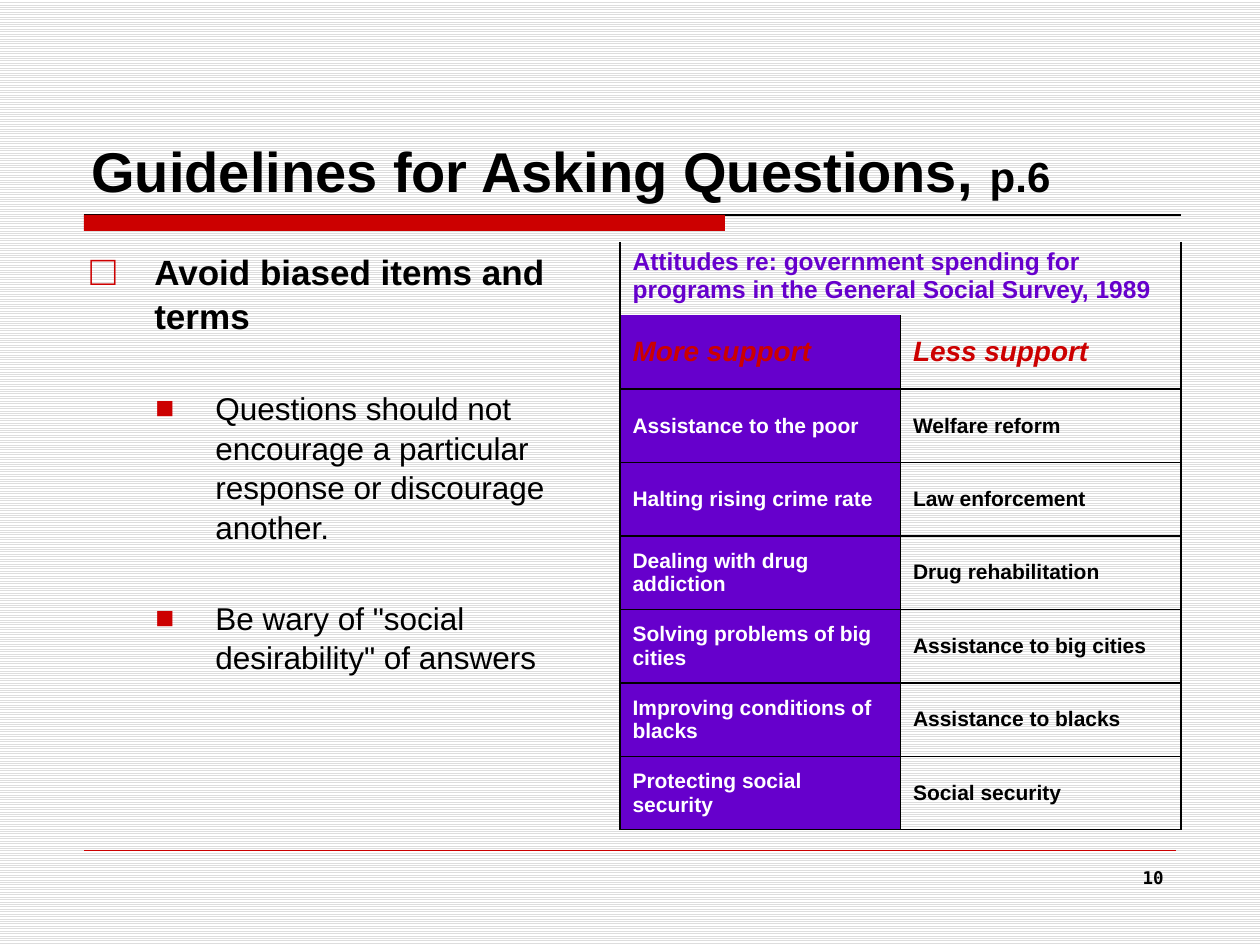
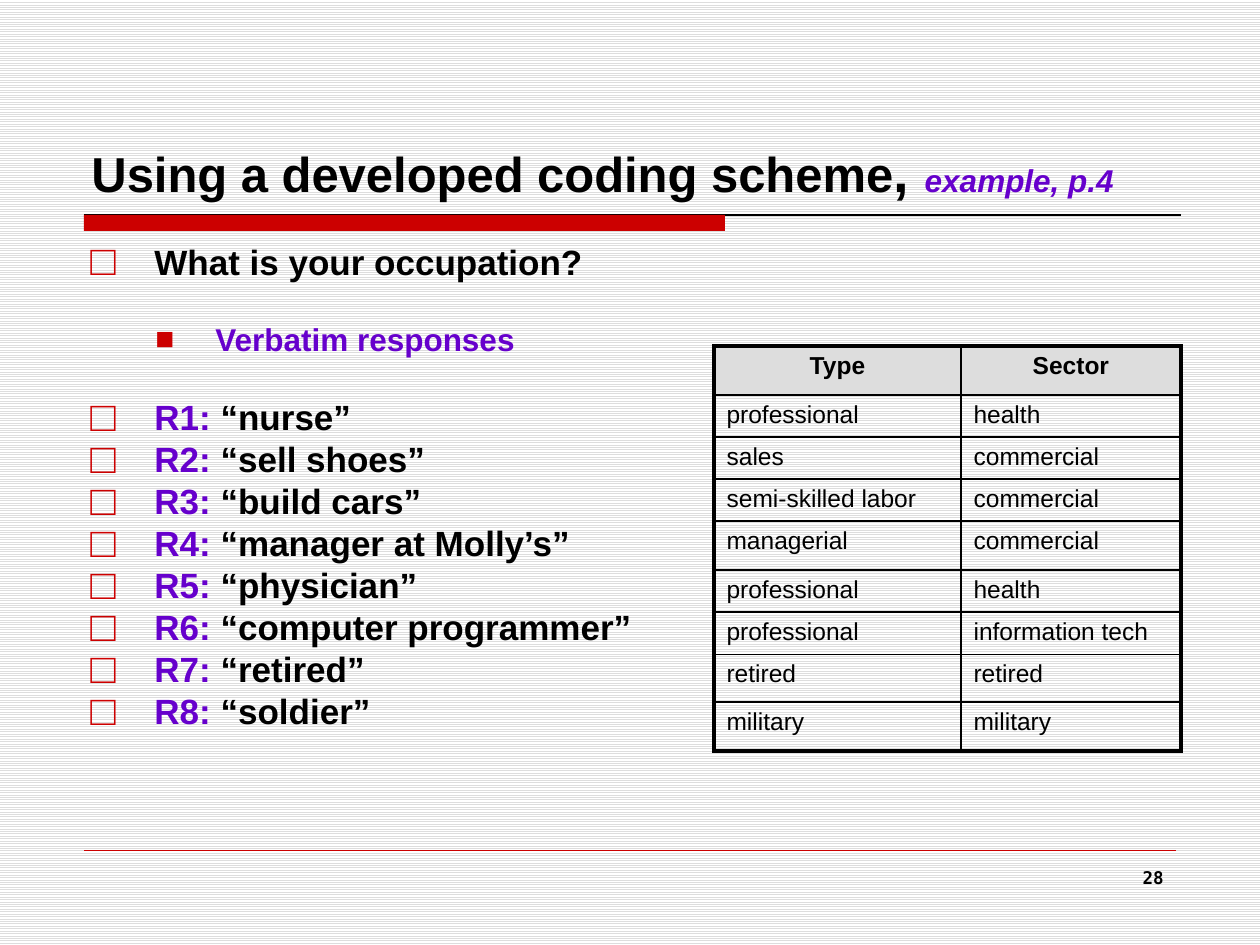
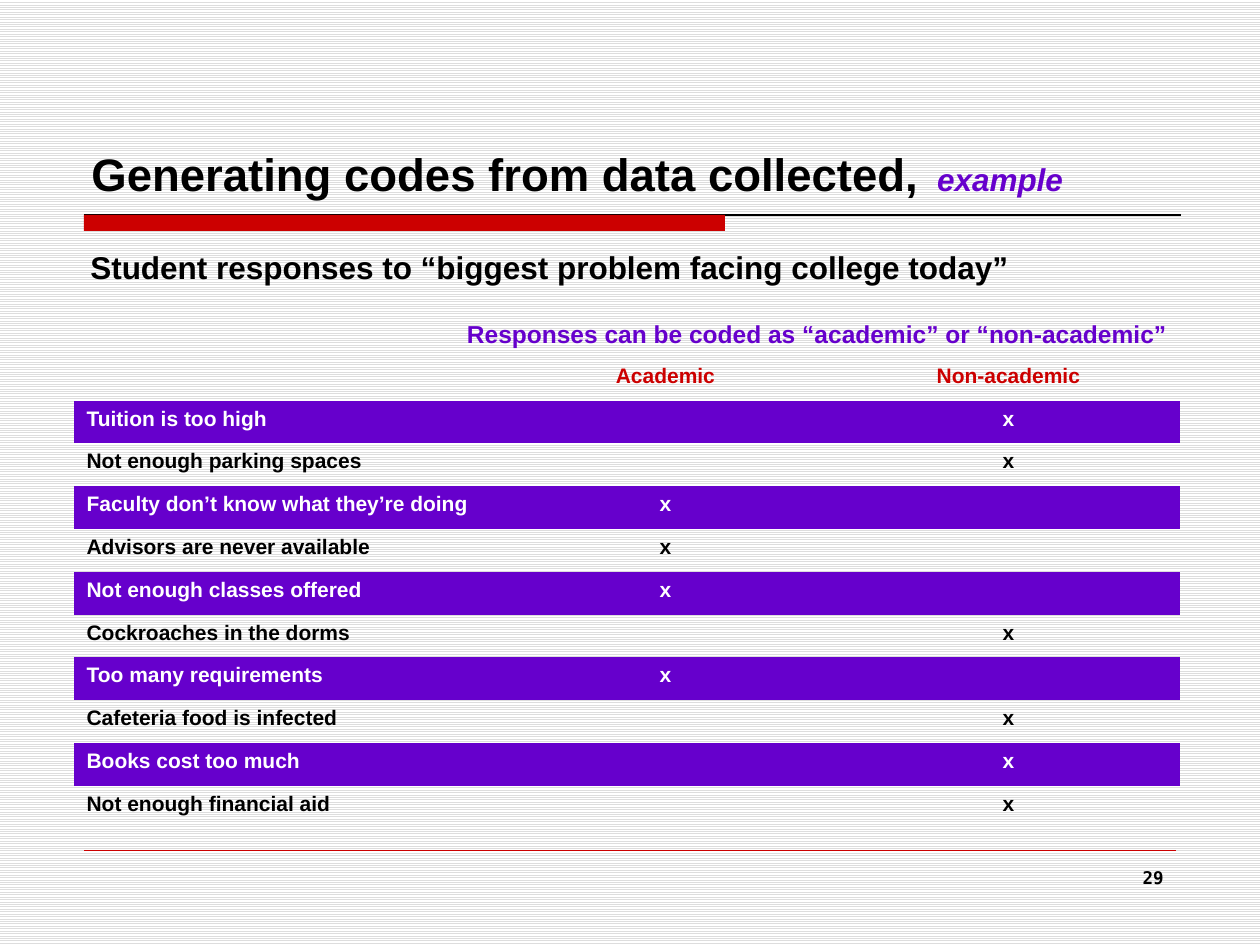
from dataclasses import dataclass

from lxml.etree import SubElement
from pptx import Presentation
from pptx.dml.color import RGBColor
from pptx.enum.dml import MSO_PATTERN
from pptx.enum.shapes import MSO_CONNECTOR, MSO_SHAPE
from pptx.enum.text import MSO_ANCHOR, PP_ALIGN
from pptx.oxml.ns import qn
from pptx.util import Pt

EMU_PER_PX = 914400 / 126


@dataclass(frozen=True)
class Theme:
    black: str = "000000"
    white: str = "FFFFFF"
    red: str = "CC0000"
    purple: str = "6600CC"
    gray: str = "DDDDDD"
    font: str = "Arial"
    number_font: str = "DejaVu Sans Mono"
    number_size: int = 10
    small: int = 12
    table: int = 14
    table_head: int = 16
    body: int = 18
    lead: int = 20
    thin: float = 1
    thick: float = 2.25


THEME = Theme()


@dataclass(frozen=True)
class Run:
    text: str
    size: int
    color: str = THEME.black
    italic: bool = False


@dataclass(frozen=True)
class Bullet:
    char: str
    indent: int
    hanging: int
    percent: int


@dataclass(frozen=True)
class CellLook:
    """Borders are widths in points: left, right, top, bottom."""
    size: int = THEME.small
    color: str = THEME.black
    bold: bool = True
    italic: bool = False
    align: PP_ALIGN = PP_ALIGN.LEFT
    anchor: MSO_ANCHOR = MSO_ANCHOR.TOP
    fill: str = ""
    borders: tuple = (0, 0, 0, 0)


TOP_BULLET = Bullet("□", 64, 64, 120)
SUB_BULLET = Bullet("■", 125, 60, 100)


def px(length):
    return round(length * EMU_PER_PX)


def rgb(color):
    return RGBColor.from_string(color)


def style_font(font, size=None, color=None, bold=None, italic=None, name=None):
    font.size = Pt(size) if size else None
    font.bold, font.italic, font.name = bold, italic, name
    if color:
        font.color.rgb = rgb(color)


def add_text_box(slide, left, top, width, height, anchor=MSO_ANCHOR.TOP):
    text_box = slide.shapes.add_textbox(px(left), px(top), px(width), px(height))
    text_box.text_frame.word_wrap = True
    text_box.text_frame.vertical_anchor = anchor
    return text_box.text_frame


def add_runs(paragraph, runs, bold=True):
    style_font(paragraph.font, bold=bold, name=THEME.font)
    for part in runs:
        run = paragraph.add_run()
        run.text = part.text
        style_font(run.font, part.size, part.color, italic=part.italic)


def set_bullet(paragraph, bullet):
    properties = paragraph._p.get_or_add_pPr()
    properties.set("marL", str(px(bullet.indent)))
    properties.set("indent", str(px(-bullet.hanging)))
    color = SubElement(properties, qn("a:buClr"))
    SubElement(color, qn("a:srgbClr"), val=THEME.red)
    SubElement(properties, qn("a:buSzPct"), val=str(bullet.percent * 1000))
    SubElement(properties, qn("a:buFont"), typeface=THEME.font)
    SubElement(properties, qn("a:buChar"), char=bullet.char)


def add_bullets(slide, width, items, line_spacing):
    """Each item is (bullet, space before in points, bold, runs)."""
    frame = add_text_box(slide, 78, 242, width, 588)
    for index, (bullet, space, bold, runs) in enumerate(items):
        paragraph = frame.add_paragraph() if index else frame.paragraphs[0]
        set_bullet(paragraph, bullet)
        paragraph.line_spacing = line_spacing
        paragraph.space_before = Pt(space)
        add_runs(paragraph, runs, bold)


def add_rule(slide, left, right, y, color, weight):
    rule = slide.shapes.add_connector(
        MSO_CONNECTOR.STRAIGHT, px(left), px(y), px(right), px(y))
    rule.line.color.rgb = rgb(color)
    rule.line.width = Pt(weight)
    SubElement(rule._element.spPr, qn("a:effectLst"))


def add_base_slide(presentation, number, title_runs):
    slide = presentation.slides.add_slide(presentation.slide_layouts[6])
    add_rule(slide, 84, 1181, 215, THEME.black, 0.75)
    band = slide.shapes.add_shape(
        MSO_SHAPE.RECTANGLE, px(84), px(215), px(641), px(16))
    band.shadow.inherit = False
    band.fill.solid()
    band.fill.fore_color.rgb = rgb(THEME.red)
    band.line.fill.background()
    add_rule(slide, 84, 1176, 850, THEME.red, 0.25)

    paragraph = add_text_box(slide, 903, 861, 273, 66).paragraphs[0]
    paragraph.text = str(number)
    paragraph.alignment = PP_ALIGN.RIGHT
    style_font(paragraph.font, THEME.number_size, THEME.black, True,
               name=THEME.number_font)

    title = add_text_box(slide, 79, 42, 1103, 168, MSO_ANCHOR.BOTTOM)
    add_runs(title.paragraphs[0], title_runs)
    return slide


def set_borders(cell, widths):
    properties = cell._tc.get_or_add_tcPr()
    for side, width in zip("LRTB", widths):
        line = SubElement(properties, qn(f"a:ln{side}"), w=str(Pt(width)))
        if width:
            fill = SubElement(line, qn("a:solidFill"))
            SubElement(fill, qn("a:srgbClr"), val=THEME.black)
        else:
            SubElement(line, qn("a:noFill"))


def style_cell(cell, text, look):
    set_borders(cell, look.borders)
    if look.fill:
        cell.fill.solid()
        cell.fill.fore_color.rgb = rgb(look.fill)
    else:
        cell.fill.background()
    cell.vertical_anchor = look.anchor
    paragraph = cell.text_frame.paragraphs[0]
    paragraph.text = text
    paragraph.alignment = look.align
    style_font(paragraph.font, look.size, look.color, look.bold, look.italic,
               THEME.font)


def add_grid(slide, box, rows, look_at, merge_first_row=False):
    """Add a table with equal rows and columns; look_at(row, column) styles cells."""
    table = slide.shapes.add_table(
        len(rows), len(rows[0]), *(px(length) for length in box)).table
    table.first_row = table.horz_banding = False
    for row, texts in enumerate(rows):
        for column, text in enumerate(texts):
            style_cell(table.cell(row, column), text, look_at(row, column))
    if merge_first_row:
        table.cell(0, 0).merge(table.cell(0, len(rows[0]) - 1))
    return table


def set_column_widths(table, widths):
    for column, width in zip(table.columns, widths):
        column.width = px(width)


def support_look(row, column):
    thin = THEME.thin
    if row == 0:
        return CellLook(THEME.table, THEME.purple, borders=(thin, thin, 0, 0))
    fill = THEME.purple if column == 0 else ""
    if row == 1:
        return CellLook(THEME.table_head, THEME.red, italic=True, fill=fill,
                        anchor=MSO_ANCHOR.MIDDLE, borders=(thin, thin, 0, thin))
    return CellLook(color=THEME.white if fill else THEME.black, fill=fill,
                    anchor=MSO_ANCHOR.MIDDLE, borders=(thin,) * 4)


def occupation_look(row, column):
    edges = (column == 0, column == 1, row == 0, row == 8)
    borders = tuple(THEME.thick if edge else THEME.thin for edge in edges)
    if row == 0:
        return CellLook(THEME.table, align=PP_ALIGN.CENTER, fill=THEME.gray,
                        borders=borders)
    return CellLook(THEME.table, bold=False, borders=borders)


def problem_look(row, column):
    if row == 0:
        return CellLook(THEME.table, THEME.purple, align=PP_ALIGN.RIGHT)
    align = PP_ALIGN.CENTER if column else PP_ALIGN.LEFT
    if row == 1:
        return CellLook(color=THEME.red, align=align)
    if row % 2 == 0:
        return CellLook(color=THEME.white, align=align, fill=THEME.purple)
    return CellLook(align=align)


def build_biased_items(presentation):
    slide = add_base_slide(presentation, 10, [
        Run("Guidelines for Asking Questions, ", 32), Run("p.6", 24)])
    add_bullets(slide, 541, [
        (TOP_BULLET, 4, True, [Run("Avoid biased items and terms", THEME.lead)]),
        (SUB_BULLET, 29, False, [Run(
            "Questions should not encourage a particular response or "
            "discourage another.", THEME.body)]),
        (SUB_BULLET, 29, False, [Run(
            'Be wary of "social desirability" of answers', THEME.body)]),
    ], 1.05)
    add_grid(slide, (620, 242, 561, 588), [
        ("Attitudes re: government spending for programs in the General "
         "Social Survey, 1989", ""),
        ("More support", "Less support"),
        ("Assistance to the poor", "Welfare reform"),
        ("Halting rising crime rate", "Law enforcement"),
        ("Dealing with drug addiction", "Drug rehabilitation"),
        ("Solving problems of big cities", "Assistance to big cities"),
        ("Improving conditions of blacks", "Assistance to blacks"),
        ("Protecting social security", "Social security"),
    ], support_look, merge_first_row=True)


def build_coding_scheme(presentation):
    slide = add_base_slide(presentation, 28, [
        Run("Using a developed coding scheme", 28), Run(", ", 32),
        Run("example, p.4", 18, THEME.purple, True)])
    answers = ["nurse", "sell shoes", "build cars", "manager at Molly’s",
               "physician", "computer programmer", "retired", "soldier"]
    items = [
        (TOP_BULLET, 4, True, [Run("What is your occupation?", THEME.lead)]),
        (SUB_BULLET, 26, True, [
            Run("Verbatim responses", THEME.body, THEME.purple)]),
    ]
    for number, answer in enumerate(answers, 1):
        items.append((TOP_BULLET, 26.5 if number == 1 else 4.8, True, [
            Run(f"R{number}:", THEME.lead, THEME.purple),
            Run(f" “{answer}”", THEME.lead)]))
    add_bullets(slide, 583, items, 0.8)
    table = add_grid(slide, (714, 346, 467, 399), [
        ("Type", "Sector"),
        ("professional", "health"),
        ("sales", "commercial"),
        ("semi-skilled labor", "commercial"),
        ("managerial", "commercial"),
        ("professional", "health"),
        ("professional", "information tech"),
        ("retired", "retired"),
        ("military", "military"),
    ], occupation_look)
    set_column_widths(table, (247, 220))
    for row, height in zip(table.rows, (49, 41, 41, 42, 49, 40, 40, 48, 49)):
        row.height = px(height)


def build_generated_codes(presentation):
    slide = add_base_slide(presentation, 29, [
        Run("Generating codes from data collected,", 26), Run(" ", 36),
        Run("example", 18, THEME.purple, True)])
    question = add_text_box(slide, 78, 242, 1097, 63)
    add_runs(question.paragraphs[0], [Run(
        "Student responses to “biggest problem facing college today”",
        THEME.body)])
    problems = [
        ("Tuition is too high", False),
        ("Not enough parking spaces", False),
        ("Faculty don’t know what they’re doing", True),
        ("Advisors are never available", True),
        ("Not enough classes offered", True),
        ("Cockroaches in the dorms", False),
        ("Too many requirements", True),
        ("Cafeteria food is infected", False),
        ("Books cost too much", False),
        ("Not enough financial aid", False),
    ]
    rows = [
        ("Responses can be coded as “academic” or “non-academic”", "", ""),
        ("", "Academic", "Non-academic"),
    ]
    for problem, academic in problems:
        rows.append((problem, "x", "") if academic else (problem, "", "x"))
    table = add_grid(slide, (74, 315, 1106, 514), rows, problem_look,
                     merge_first_row=True)
    set_column_widths(table, (420, 343, 343))


def main():
    presentation = Presentation()
    presentation.slide_width, presentation.slide_height = px(1260), px(945)
    background = presentation.slide_master.background.fill
    background.patterned()
    background.pattern = MSO_PATTERN.LIGHT_HORIZONTAL
    background.fore_color.rgb = rgb(THEME.gray)
    background.back_color.rgb = rgb(THEME.white)
    build_biased_items(presentation)
    build_coding_scheme(presentation)
    build_generated_codes(presentation)
    presentation.save("out.pptx")


if __name__ == "__main__":
    main()
